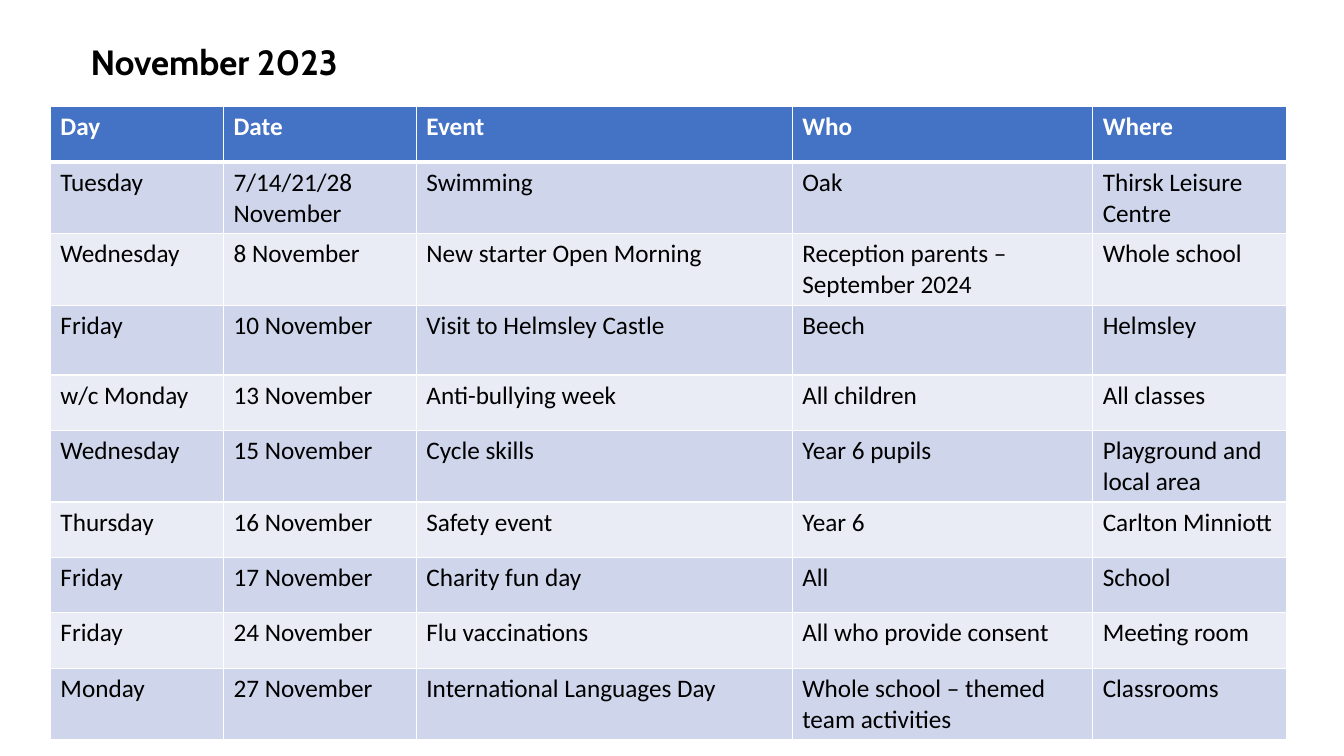
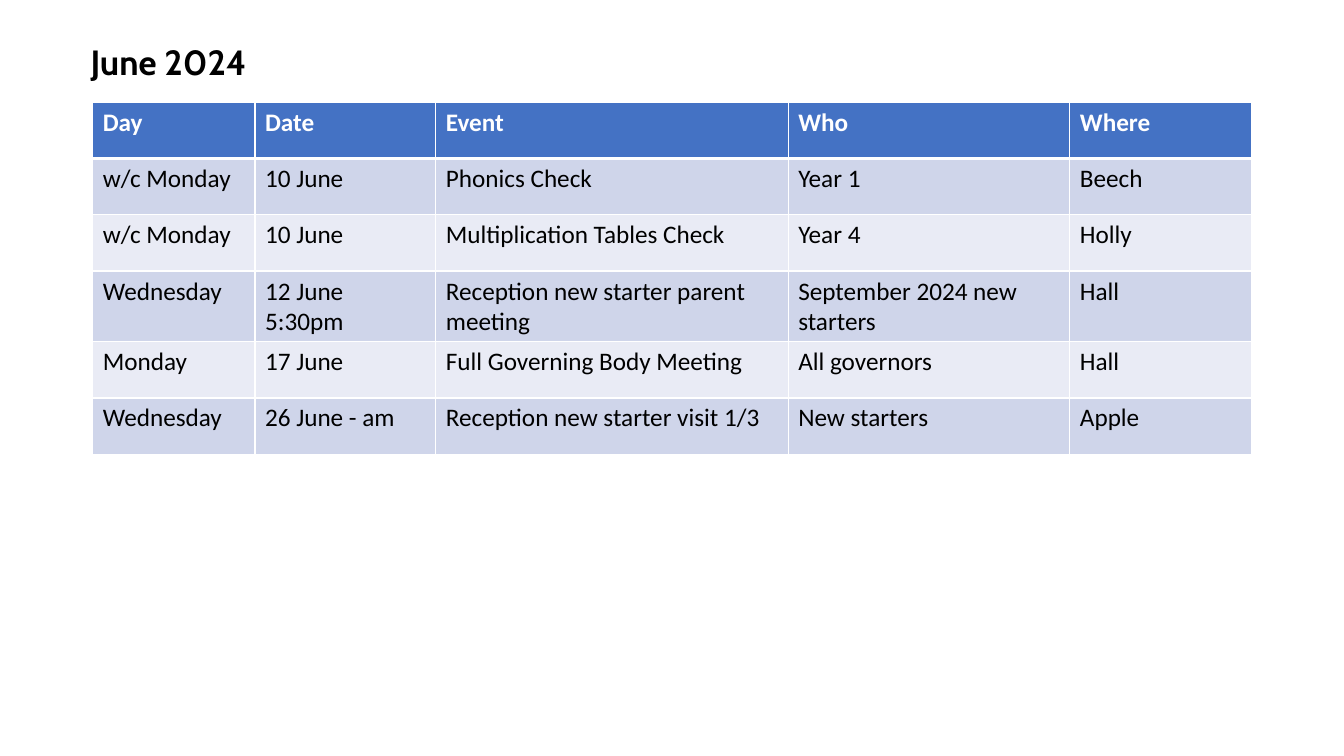
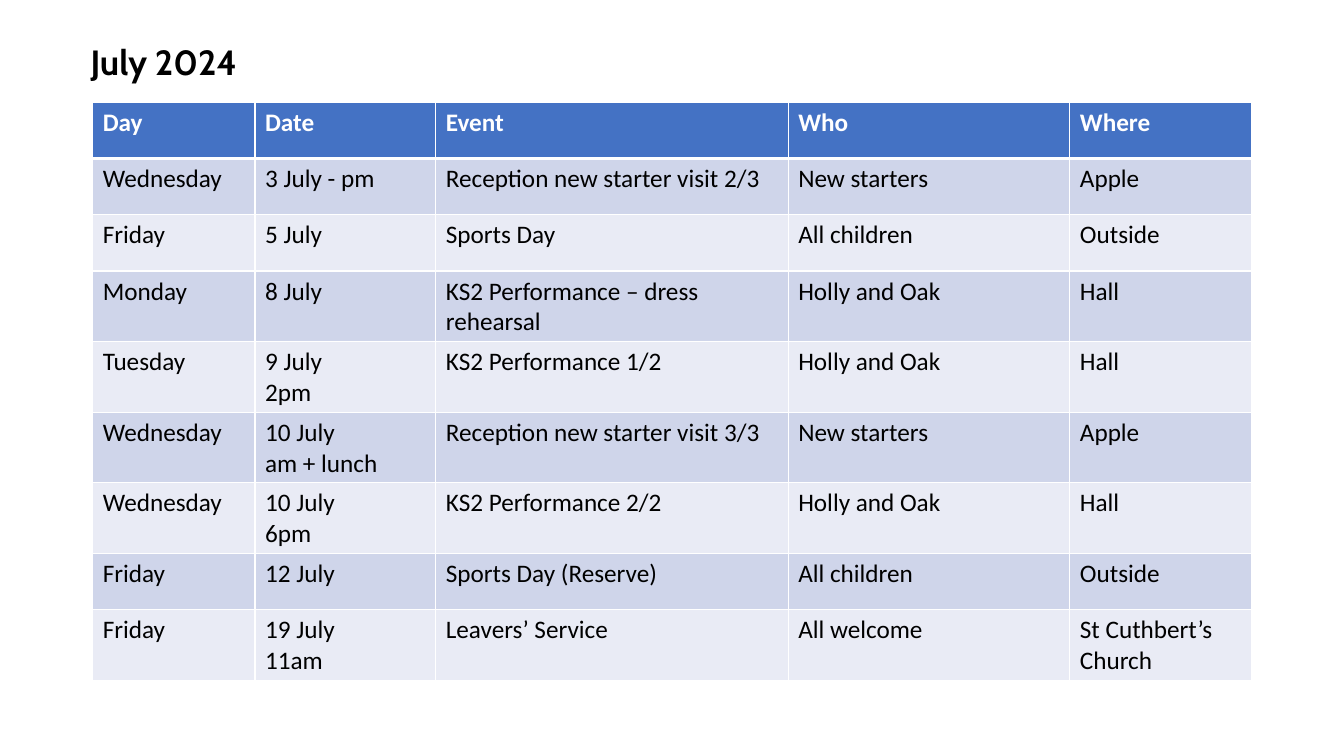
"""Build the school calendar slides, one month per slide."""
import pptx
import pptx.dml.color
import pptx.enum.text
import pptx.oxml.ns
import pptx.util
from lxml import etree

SLIDE_W, SLIDE_H = 13.33, 7.5
COLORS = {
    "header": "4472C4",
    "odd": "CFD5EA",
    "even": "E9EBF5",
    "white": "FFFFFF",
    "text": "000000",
}
TITLE_FONT, BODY_FONT = "Cabin", "Calibri"
HEADINGS = ["Day", "Date", "Event", "Who", "Where"]
COLUMN_SHARES = [14, 15.6, 30.4, 24.3, 15.7]
WIDE = {"left": 3.75, "top": 14.13, "width": 92, "row": 7.33}
NARROW = {"left": 6.9, "top": 13.5, "width": 86.25, "row": 7.45}
TALL_ROW = 9.2

NOVEMBER = [
    ["Tuesday", "7/14/21/28 November", "Swimming", "Oak", "Thirsk Leisure Centre"],
    ["Wednesday", "8 November", "New starter Open Morning",
     "Reception parents – September 2024", "Whole school"],
    ["Friday", "10 November", "Visit to Helmsley Castle", "Beech", "Helmsley"],
    ["w/c Monday", "13 November", "Anti-bullying week", "All children", "All classes"],
    ["Wednesday", "15 November", "Cycle skills", "Year 6 pupils", "Playground and local area"],
    ["Thursday", "16 November", "Safety event", "Year 6", "Carlton Minniott"],
    ["Friday", "17 November", "Charity fun day", "All", "School"],
    ["Friday", "24 November", "Flu vaccinations", "All who provide consent", "Meeting room"],
    ["Monday", "27 November", "International Languages Day",
     "Whole school – themed team activities", "Classrooms"],
]
JUNE = [
    ["w/c Monday", "10 June", "Phonics Check", "Year 1", "Beech"],
    ["w/c Monday", "10 June", "Multiplication Tables Check", "Year 4", "Holly"],
    ["Wednesday", "12 June\n5:30pm", "Reception new starter parent meeting",
     "September 2024 new starters", "Hall"],
    ["Monday", "17 June", "Full Governing Body Meeting", "All governors", "Hall"],
    ["Wednesday", "26 June - am", "Reception new starter visit 1/3", "New starters", "Apple"],
]
JULY = [
    ["Wednesday", "3 July - pm", "Reception new starter visit 2/3", "New starters", "Apple"],
    ["Friday", "5 July", "Sports Day", "All children", "Outside"],
    ["Monday", "8 July", "KS2 Performance – dress rehearsal", "Holly and Oak", "Hall"],
    ["Tuesday", "9 July\n2pm", "KS2 Performance 1/2", "Holly and Oak", "Hall"],
    ["Wednesday", "10 July\nam + lunch", "Reception new starter visit 3/3",
     "New starters", "Apple"],
    ["Wednesday", "10 July\n6pm", "KS2 Performance 2/2", "Holly and Oak", "Hall"],
    ["Friday", "12 July", "Sports Day (Reserve)", "All children", "Outside"],
    ["Friday", "19 July\n11am", "Leavers’ Service", "All welcome", "St Cuthbert’s Church"],
]


def across(percent):
    """Return a share of the slide's width."""
    return pptx.util.Inches(SLIDE_W * percent / 100)


def down(percent):
    """Return a share of the slide's height."""
    return pptx.util.Inches(SLIDE_H * percent / 100)


def rgb(name):
    """Return a named colour."""
    return pptx.dml.color.RGBColor.from_string(COLORS[name])


def write(tf, text, font, size, color, bold):
    """Write each line of the text as a paragraph with one run."""
    for i, line in enumerate(text.split("\n")):
        p = tf.paragraphs[0] if i == 0 else tf.add_paragraph()
        r = p.add_run()
        r.text = line
        r.font.name = font
        r.font.size = pptx.util.Pt(size)
        r.font.bold = bold
        r.font.color.rgb = rgb(color)


def add_title(s, text):
    """Add the month title."""
    sp = s.shapes.add_textbox(across(6), down(4.75), across(33.4), down(6.93))
    tf = sp.text_frame
    tf.word_wrap = True
    tf.auto_size = pptx.enum.text.MSO_AUTO_SIZE.SHAPE_TO_FIT_TEXT
    write(tf, text, TITLE_FONT, 25, "text", True)


def set_borders(cell, top, bottom):
    """Give a cell white borders, with top and bottom widths in points."""
    qn = pptx.oxml.ns.qn
    props = cell._tc.get_or_add_tcPr()
    for tag, width in (("a:lnL", 1), ("a:lnR", 1), ("a:lnT", top), ("a:lnB", bottom)):
        ln = etree.SubElement(props, qn(tag), w=str(pptx.util.Pt(width)))
        fill = etree.SubElement(ln, qn("a:solidFill"))
        etree.SubElement(fill, qn("a:srgbClr"), val=COLORS["white"])


def fill_cell(cell, text, row):
    """Style and fill one cell according to its row."""
    header = row == 0
    set_borders(cell, 3 if row == 1 else 1, 3 if header else 1)
    cell.fill.solid()
    cell.fill.fore_color.rgb = rgb("header" if header else "odd" if row % 2 else "even")
    write(cell.text_frame, text, BODY_FONT, 18, "white" if header else "text", header)


def add_events(s, events, layout, tall):
    """Add the table of a month's events."""
    rows = [HEADINGS] + events
    heights = [TALL_ROW if i in tall else layout["row"] for i in range(len(rows))]
    frame = s.shapes.add_table(
        len(rows), len(HEADINGS), across(layout["left"]), down(layout["top"]),
        across(layout["width"]), down(sum(heights)))
    table = frame.table
    for column, share in zip(table.columns, COLUMN_SHARES):
        column.width = across(layout["width"] * share / 100)
    for i, (values, height) in enumerate(zip(rows, heights)):
        table.rows[i].height = down(height)
        for j, text in enumerate(values):
            fill_cell(table.cell(i, j), text, i)


def add_month(prs, title, events, layout, tall=()):
    """Add the slide for one month."""
    s = prs.slides.add_slide(prs.slide_layouts[6])
    add_events(s, events, layout, tall)
    add_title(s, title)


def main():
    """Build and save the calendar."""
    prs = pptx.Presentation()
    prs.slide_width, prs.slide_height = across(100), down(100)
    add_month(prs, "November 2023", NOVEMBER, WIDE, tall=(1, 2, 3, 5, 9))
    add_month(prs, "June 2024", JUNE, NARROW)
    add_month(prs, "July 2024", JULY, NARROW)
    prs.save("out.pptx")


if __name__ == "__main__":
    main()
